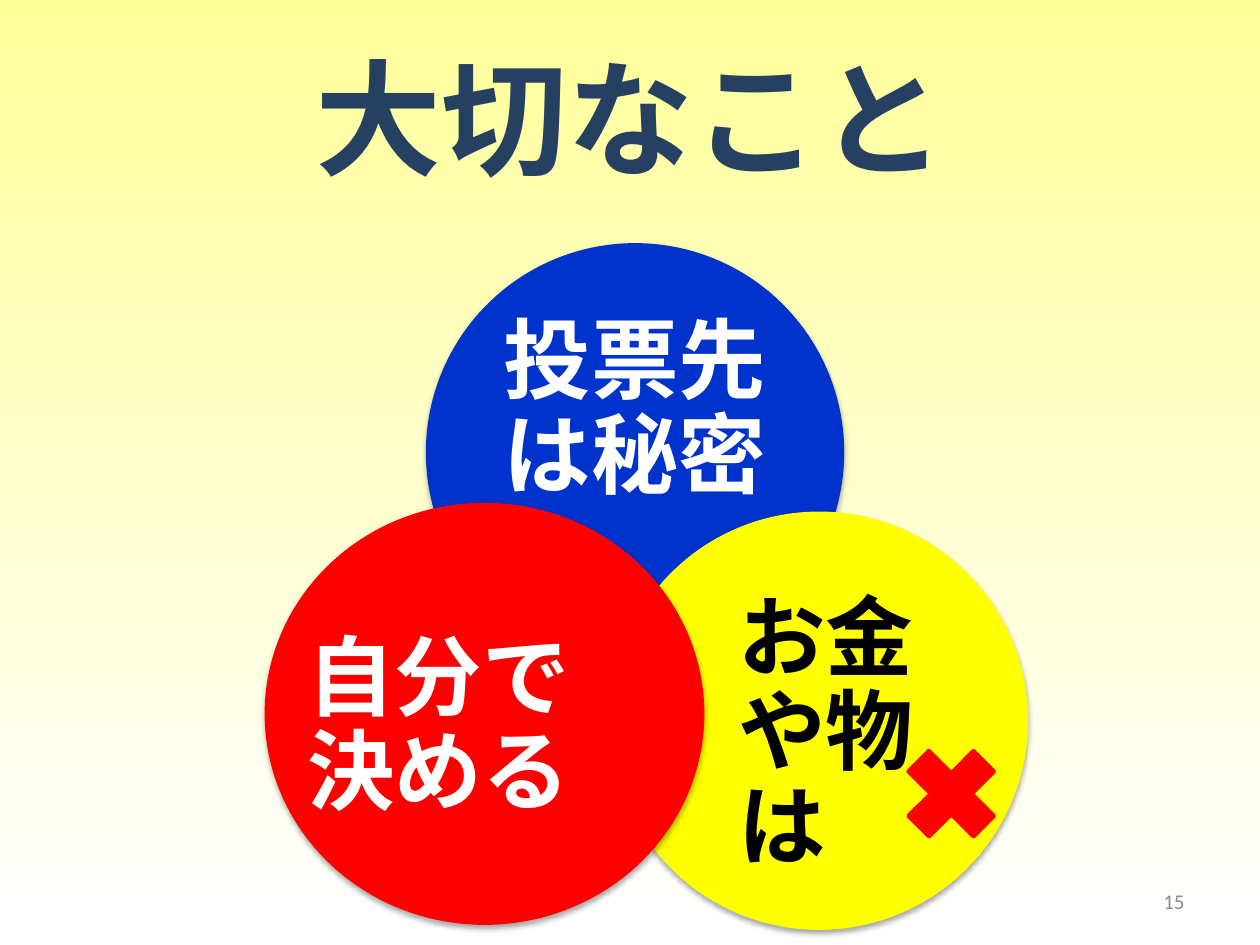
import lxml.etree
import pptx
import pptx.dml.color
import pptx.enum.shapes
import pptx.enum.text
import pptx.oxml.ns
import pptx.util

Inches = pptx.util.Inches
Pt = pptx.util.Pt
RGBColor = pptx.dml.color.RGBColor
SHAPES = pptx.enum.shapes.MSO_SHAPE
ALIGN = pptx.enum.text.PP_ALIGN
qn = pptx.oxml.ns.qn

PALE_YELLOW = RGBColor(0xFF, 0xFF, 0x99)
WHITE = RGBColor(0xFF, 0xFF, 0xFF)
BLACK = RGBColor(0x00, 0x00, 0x00)
NAVY = RGBColor(0x25, 0x40, 0x61)
GREY = RGBColor(0x8C, 0x8C, 0x8C)
BLUE = RGBColor(0x00, 0x33, 0xCC)
YELLOW = RGBColor(0xFF, 0xFF, 0x00)
RED = RGBColor(0xFF, 0x00, 0x00)

JAPANESE_FONT = "Noto Sans CJK JP"

# Circle box, circle colour, label box, label, label colour, alignment
PRINCIPLES = [
    ((3.38, 1.93, 3.32, 3.32), BLUE,
     (3.82, 2.52, 2.44, 1.49), "投票先は秘密", WHITE, ALIGN.CENTER),
    ((4.84, 4.06, 3.32, 3.32), YELLOW,
     (5.86, 4.92, 1.99, 1.83), "お金や物は", BLACK, ALIGN.LEFT),
    ((2.1, 3.99, 3.49, 3.35), RED,
     (2.43, 4.86, 2.1, 1.84), "自分で決める", WHITE, ALIGN.CENTER),
]


def inches(box):
    return [Inches(length) for length in box]


def paint_background(slide):
    fill = slide.background.fill
    fill.gradient()
    fill.gradient_angle = 270
    for stop, position, color in zip(fill.gradient_stops, (0, 0.98), (PALE_YELLOW, WHITE)):
        stop.position = position
        stop.color.rgb = color


def write_text(shape, text, size, font, color, align, bold=False):
    frame = shape.text_frame
    frame.text = text
    frame.word_wrap = True
    frame.vertical_anchor = pptx.enum.text.MSO_ANCHOR.MIDDLE
    paragraph = frame.paragraphs[0]
    paragraph.alignment = align
    run = paragraph.runs[0]
    run.font.size = Pt(size)
    run.font.bold = bold
    run.font.name = font
    run.font.color.rgb = color
    east_asian = lxml.etree.Element(qn("a:ea"), typeface=font)
    run.font._element.find(qn("a:latin")).addnext(east_asian)


def add_title(slide, text):
    title = slide.shapes.title
    title.left, title.top, title.width, title.height = inches((0.5, 0.3, 9, 1.25))
    write_text(title, text, 72, JAPANESE_FONT, NAVY, ALIGN.CENTER, bold=True)


def add_soft_shadow(shape):
    """Give the shape a faint shadow falling straight down."""
    shape.shadow.inherit = False
    effects = shape._element.spPr.find(qn("a:effectLst"))
    shadow = lxml.etree.SubElement(
        effects, qn("a:outerShdw"), blurRad=str(Pt(3.1)), dist=str(Pt(1.8)),
        dir="5400000", rotWithShape="0")
    color = lxml.etree.SubElement(shadow, qn("a:srgbClr"), val=str(BLACK))
    lxml.etree.SubElement(color, qn("a:alpha"), val="35000")


def add_circle(shapes, box, color):
    circle = shapes.add_shape(SHAPES.OVAL, *inches(box))
    circle.fill.solid()
    circle.fill.fore_color.rgb = color
    circle.line.fill.background()
    add_soft_shadow(circle)


def add_label(shapes, box, text, color, align):
    label = shapes.add_textbox(*inches(box))
    write_text(label, text, 50, JAPANESE_FONT, color, align, bold=True)
    frame = label.text_frame
    frame.margin_left = frame.margin_right = frame.margin_top = frame.margin_bottom = 0
    frame.paragraphs[0].line_spacing = 0.9


def add_cross(slide):
    cross = slide.shapes.add_shape(SHAPES.MATH_MULTIPLY, *inches((7.05, 5.8, 1, 1)))
    cross.shadow.inherit = False
    cross.fill.solid()
    cross.fill.fore_color.rgb = RED
    cross.line.color.rgb = RED
    cross.line.width = Pt(2)


def add_page_number(slide, number):
    page = slide.shapes.add_textbox(*inches((7.17, 6.95, 2.33, 0.4)))
    write_text(page, number, 12, "Calibri", GREY, ALIGN.RIGHT)


def main():
    deck = pptx.Presentation()
    deck.slide_width = Inches(10)
    deck.slide_height = Inches(7.5)
    slide = deck.slides.add_slide(deck.slide_layouts[5])
    paint_background(slide)
    add_page_number(slide, "15")
    add_title(slide, "大切なこと")
    principles = slide.shapes.add_group_shape().shapes
    for circle_box, fill, label_box, text, color, align in PRINCIPLES:
        add_circle(principles, circle_box, fill)
        add_label(principles, label_box, text, color, align)
    add_cross(slide)
    deck.save("out.pptx")


if __name__ == "__main__":
    main()
